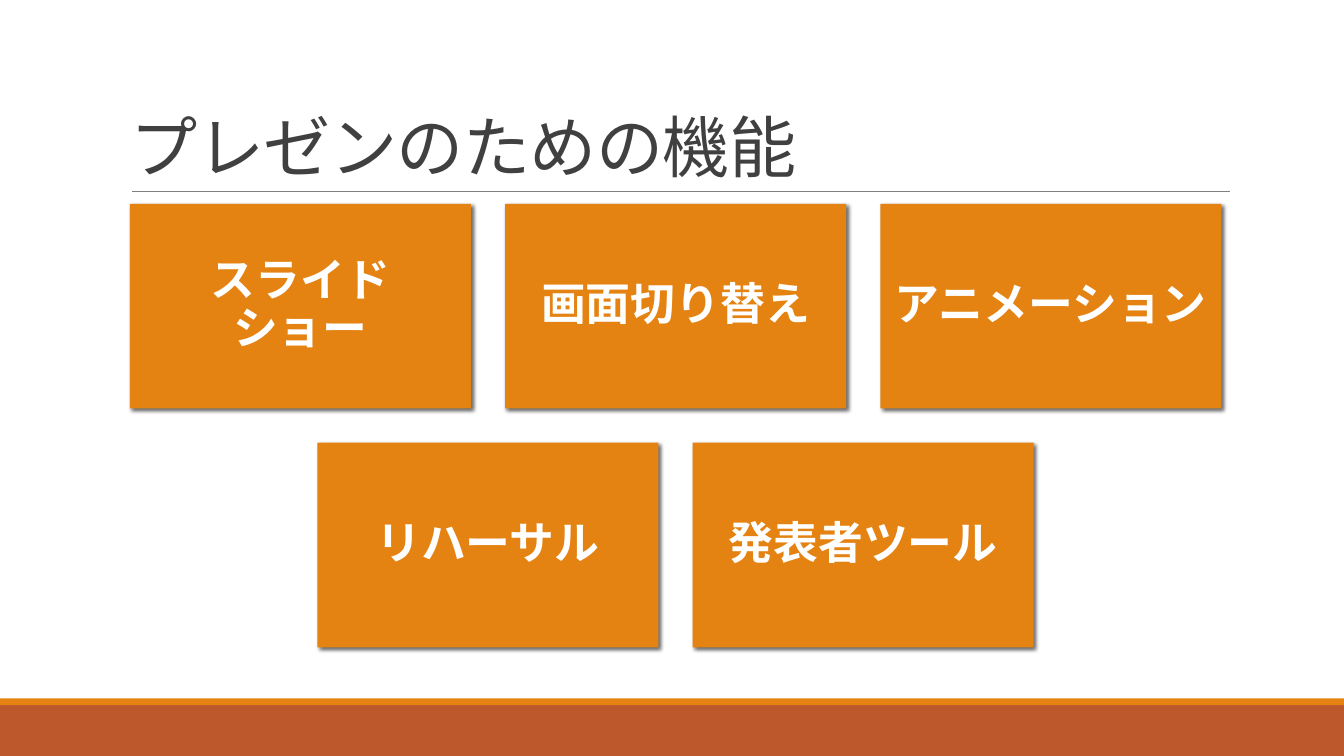
import pptx
import pptx.dml.color
import pptx.enum.shapes
import pptx.enum.text
import pptx.oxml
import pptx.oxml.ns
import pptx.oxml.xmlchemy
import pptx.util

Pt = pptx.util.Pt
qn = pptx.oxml.ns.qn
OxmlElement = pptx.oxml.xmlchemy.OxmlElement
RGBColor = pptx.dml.color.RGBColor
ANCHOR = pptx.enum.text.MSO_ANCHOR
RECTANGLE = pptx.enum.shapes.MSO_SHAPE.RECTANGLE

ORANGE = RGBColor(0xE4, 0x83, 0x12)
RUST = RGBColor(0xBD, 0x58, 0x2C)
GRAY = RGBColor(0x80, 0x80, 0x80)
CHARCOAL = RGBColor(0x40, 0x40, 0x40)
WHITE = RGBColor(0xFF, 0xFF, 0xFF)

LATIN_FONT = "Calibri"
JAPANESE_FONT = "Noto Sans CJK JP"
SLIDE_WIDTH, SLIDE_HEIGHT = 960, 540
FEATURE_ROWS = [
    ["スライド ショー", "画面切り替え", "アニメーション"],
    ["リハーサル", "発表者ツール"],
]
CARD_SHADOW = (
    '<a:outerShdw xmlns:a="http://schemas.openxmlformats.org/drawingml/2006/main" '
    'blurRad="38100" dist="25400" dir="2700000" algn="br" rotWithShape="0">'
    '<a:srgbClr val="000000"><a:alpha val="60000"/></a:srgbClr></a:outerShdw>'
)


def add_run(paragraph, text, size, font, color):
    """Append a run with Latin and East Asian fonts and return it."""
    run = paragraph.add_run()
    run.text = text
    run.font.size = Pt(size)
    run.font.name = font
    run.font.color.rgb = color
    east_asian = OxmlElement("a:ea")
    east_asian.set("typeface", JAPANESE_FONT)
    run.font._element.append(east_asian)
    return run


def add_box(slide, left, top, width, height, color):
    """Add a flat filled rectangle without an outline."""
    box = slide.shapes.add_shape(RECTANGLE, Pt(left), Pt(top), Pt(width), Pt(height))
    box.fill.solid()
    box.fill.fore_color.rgb = color
    box.line.fill.background()
    box.shadow.inherit = False
    return box


def add_footer(slide, left, top, width, height):
    """Draw the rust footer band with its orange strip on top."""
    strip_height = 4.8
    band_top = top + strip_height
    add_box(slide, left, band_top, width, height - strip_height, RUST)
    add_box(slide, left, top, width, strip_height, ORANGE)


def add_title(slide, left, top, width, height):
    """Place the title at the bottom of its box, above a thin rule."""
    bottom = Pt(top + height)
    rule = slide.shapes.add_connector(
        pptx.enum.shapes.MSO_CONNECTOR.STRAIGHT,
        Pt(left + 8), bottom, Pt(left + width), bottom)
    rule.line.color.rgb = GRAY
    rule.line.width = Pt(0.5)
    rule._element.spPr.append(OxmlElement("a:effectLst"))

    title = slide.shapes.add_textbox(Pt(left), Pt(top), Pt(width), Pt(height))
    frame = title.text_frame
    frame.word_wrap = True
    frame.vertical_anchor = ANCHOR.BOTTOM
    heading = frame.paragraphs[0]
    heading.line_spacing = 0.85
    run = add_run(heading, "プレゼンのための機能", 48, LATIN_FONT, CHARCOAL)
    run.font._element.set("spc", "-50")


def add_card(slide, feature, left, top, width, height):
    """Draw one shadowed feature card with a centred label."""
    card = add_box(slide, left, top, width, height, ORANGE)
    effects = card._element.spPr.find(qn("a:effectLst"))
    effects.append(pptx.oxml.parse_xml(CARD_SHADOW))
    frame = card.text_frame
    frame.word_wrap = True
    frame.vertical_anchor = ANCHOR.MIDDLE
    frame.margin_left = frame.margin_right = Pt(9.6)
    frame.margin_top = frame.margin_bottom = Pt(9.6)
    label = frame.paragraphs[0]
    label.alignment = pptx.enum.text.PP_ALIGN.CENTER
    label.line_spacing = 0.9
    add_run(label, feature, 32, JAPANESE_FONT, WHITE).font.bold = True


def add_feature_grid(slide, left, top, width, height):
    """Lay out the feature cards in rows centred in the given box."""
    gap = 24.4
    columns = max(len(features) for features in FEATURE_ROWS)
    rows = len(FEATURE_ROWS)
    card_width = (width - gap * (columns - 1)) / columns
    card_height = (height - gap * (rows - 1)) / rows
    for row, features in enumerate(FEATURE_ROWS):
        row_width = len(features) * (card_width + gap) - gap
        row_left = left + (width - row_width) / 2
        card_top = top + row * (card_height + gap)
        for column, feature in enumerate(features):
            card_left = row_left + column * (card_width + gap)
            add_card(slide, feature, card_left, card_top, card_width, card_height)


def main():
    """Build the slide and save the presentation."""
    presentation = pptx.Presentation()
    presentation.slide_width = Pt(SLIDE_WIDTH)
    presentation.slide_height = Pt(SLIDE_HEIGHT)
    slide = presentation.slides.add_slide(presentation.slide_layouts[6])
    add_footer(slide, 0, 498.8, SLIDE_WIDTH, SLIDE_HEIGHT - 498.8)
    add_title(slide, 86.4, 22.6, 792, 114)
    add_feature_grid(slide, 92.8, 145.6, 779.6, 316.8)
    presentation.save("out.pptx")


if __name__ == "__main__":
    main()
